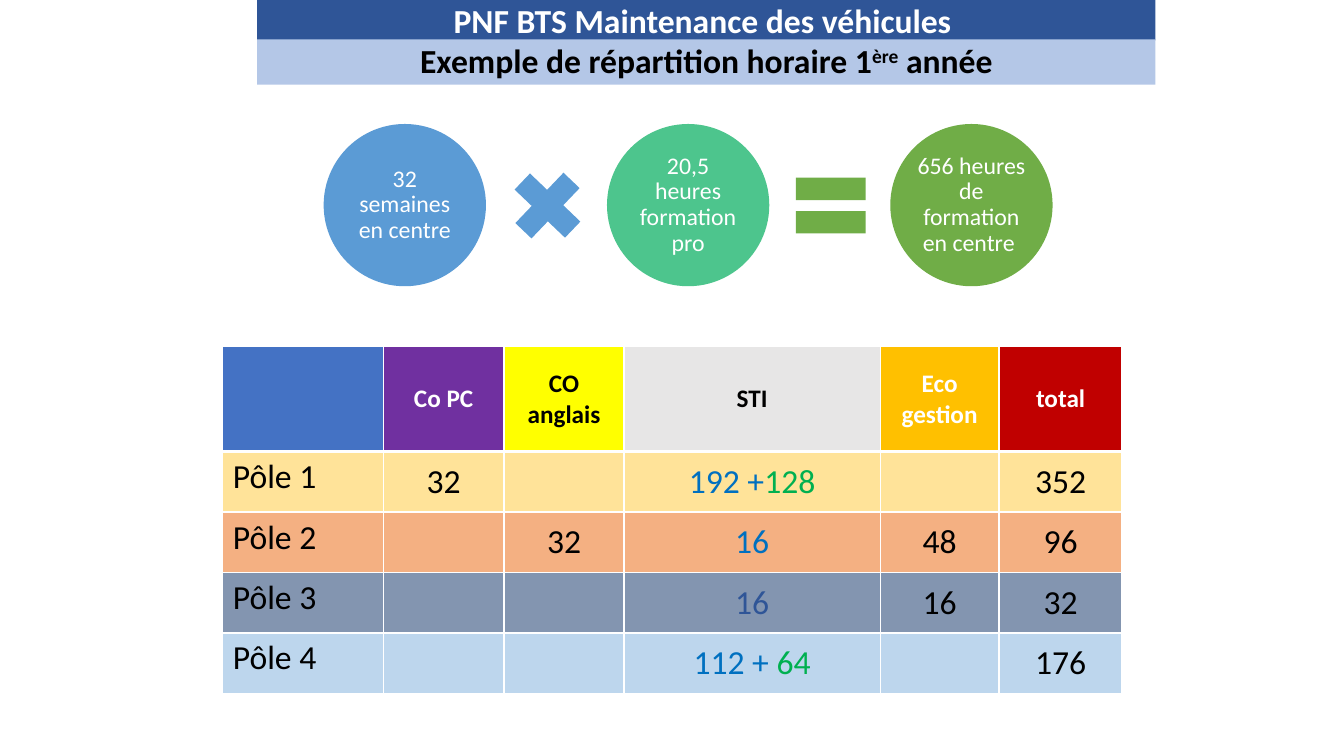
from lxml import etree
from pptx import Presentation
from pptx.dml.color import RGBColor
from pptx.enum import shapes as sh, text as tx
from pptx.oxml import ns
from pptx.util import Inches, Pt

WHITE = RGBColor(0xFF, 0xFF, 0xFF)
BLACK = RGBColor(0, 0, 0)
NAVY = RGBColor(0x2F, 0x55, 0x97)
PALE = RGBColor(0xB4, 0xC7, 0xE7)
BLUE = RGBColor(0x5B, 0x9B, 0xD5)
TEAL = RGBColor(0x4D, 0xC5, 0x8D)
GREEN = RGBColor(0x70, 0xAD, 0x47)
ROYAL = RGBColor(0x44, 0x72, 0xC4)
PURPLE = RGBColor(0x70, 0x30, 0xA0)
YELLOW = RGBColor(0xFF, 0xFF, 0)
GREY = RGBColor(0xE7, 0xE6, 0xE6)
GOLD = RGBColor(0xFF, 0xC0, 0)
RED = RGBColor(0xC0, 0, 0)
SAND = RGBColor(0xFF, 0xE3, 0x99)
PEACH = RGBColor(0xF4, 0xB0, 0x82)
SLATE = RGBColor(0x83, 0x95, 0xB0)
SKY = RGBColor(0xBD, 0xD6, 0xED)
AZURE = RGBColor(0, 0x70, 0xC0)
LEAF = RGBColor(0, 0xB0, 0x50)

SHAPE = sh.MSO_SHAPE
MIDDLE = tx.MSO_ANCHOR.MIDDLE
CENTER = tx.PP_ALIGN.CENTER

HEAD = [("", ROYAL, WHITE), ("Co PC", PURPLE, WHITE),
        ("CO anglais", YELLOW, BLACK), ("STI", GREY, BLACK),
        ("Eco gestion", GOLD, WHITE), ("total", RED, WHITE)]
# Fill, then the runs of each cell as (text, colour) pairs or plain black text
ROWS = [
    (SAND, ["Pôle 1", "32", "", [("192 +", AZURE), ("128", LEAF)], "", "352"]),
    (PEACH, ["Pôle 2", "", "32", [("16", AZURE)], "48", "96"]),
    (SLATE, ["Pôle 3", "", "", [("16", NAVY)], "16", "32"]),
    (SKY, ["Pôle 4", "", "", [("112 + ", AZURE), ("64", LEAF)], "", "176"]),
]
WIDTHS = [1.59, 1.2, 1.19, 2.54, 1.18, 1.22]
HEIGHTS = [1.04] + [0.6] * 4


def write(frame, runs, size, bold=False, align=CENTER):
    """Fill the first paragraph with (text, colour) runs and return it."""
    para = frame.paragraphs[0]
    para.alignment = align
    for words, color in runs:
        run = para.add_run()
        run.text = words
        font = run.font
        font.name, font.size, font.bold = "Calibri", Pt(size), bold
        font.color.rgb = color
    return para


def add_form(slide, kind, left, top, width, height, fill):
    form = slide.shapes.add_shape(
        kind, Inches(left), Inches(top), Inches(width), Inches(height))
    form.shadow.inherit = False
    form.fill.solid()
    form.fill.fore_color.rgb = fill
    form.line.fill.background()
    return form


def add_bar(slide, top, height, fill, runs):
    bar = add_form(slide, SHAPE.RECTANGLE, 2.55, top, 8.91, height, fill)
    frame = bar.text_frame
    frame.word_wrap = True
    frame.vertical_anchor = tx.MSO_ANCHOR.TOP
    para = write(frame, runs, 24, True)
    para.line_spacing = 0.9
    return para


def add_disc(slide, left, fill, words):
    disc = add_form(slide, SHAPE.OVAL, left, 1.23, 1.61, 1.61, fill)
    frame = disc.text_frame
    frame.word_wrap = True
    frame.vertical_anchor = MIDDLE
    frame.margin_left = frame.margin_right = Inches(0.02)
    frame.margin_top = frame.margin_bottom = Inches(0.02)
    write(frame, [(words, WHITE)], 17).line_spacing = 0.9


def add_sign(slide, kind, left, fill, turn=0):
    add_form(slide, kind, left, 1.57, 0.94, 0.94, fill).rotation = turn


def set_edges(cell, top, bottom):
    """Draw white cell borders; top and bottom are widths in points."""
    props = cell._tc.get_or_add_tcPr()
    for side, width in (("L", 0.96), ("R", 0.96), ("T", top), ("B", bottom)):
        line = etree.SubElement(props, ns.qn("a:ln" + side), w=str(Pt(width)))
        fill = etree.SubElement(line, ns.qn("a:solidFill"))
        etree.SubElement(fill, ns.qn("a:srgbClr"), val=str(WHITE))


def set_cell(cell, runs, fill, size, bold, align):
    cell.fill.solid()
    cell.fill.fore_color.rgb = fill
    if align == CENTER:
        cell.vertical_anchor = MIDDLE
    write(cell.text_frame, runs, size, bold, align)


def add_hours(slide):
    """Add the table of hours per pole and subject."""
    table = slide.shapes.add_table(
        len(HEIGHTS), len(WIDTHS), Inches(2.21), Inches(3.44),
        Inches(sum(WIDTHS)), Inches(sum(HEIGHTS))).table
    for col, width in zip(table.columns, WIDTHS):
        col.width = Inches(width)
    for i, height in enumerate(HEIGHTS):
        table.rows[i].height = Inches(height)
        for j in range(len(WIDTHS)):
            set_edges(table.cell(i, j), 3 if i == 1 else 0.96,
                      3 if i == 0 else 0.96)
    for j, (words, fill, color) in enumerate(HEAD):
        runs = [(words, color)] if words else []
        set_cell(table.cell(0, j), runs, fill, 18, True, CENTER)
    for i, (fill, items) in enumerate(ROWS, 1):
        for j, item in enumerate(items):
            if isinstance(item, str):
                item = [(item, BLACK)] if item else []
            align = CENTER if j else tx.PP_ALIGN.LEFT
            set_cell(table.cell(i, j), item, fill, 24, False, align)


def main():
    deck = Presentation()
    deck.slide_width, deck.slide_height = Inches(13.33), Inches(7.5)
    slide = deck.slides.add_slide(deck.slide_layouts[6])

    add_disc(slide, 3.21, BLUE, "32 semaines en centre")
    add_sign(slide, SHAPE.MATH_PLUS, 4.96, BLUE, 43.7)
    add_disc(slide, 6.02, TEAL, "20,5 heures formation pro")
    add_sign(slide, SHAPE.MATH_EQUAL, 7.77, GREEN)
    add_disc(slide, 8.83, GREEN, "656 heures de formation en centre ")

    add_bar(slide, -0.01, 0.41, NAVY,
            [("PNF BTS Maintenance des véhicules ", WHITE)])
    year = add_bar(slide, 0.39, 0.45, PALE,
                   [("Exemple de répartition horaire 1", BLACK),
                    ("ère", BLACK), (" année", BLACK)])
    year.runs[1].font._element.set("baseline", "30000")

    add_hours(slide)
    deck.save("out.pptx")


if __name__ == "__main__":
    main()
